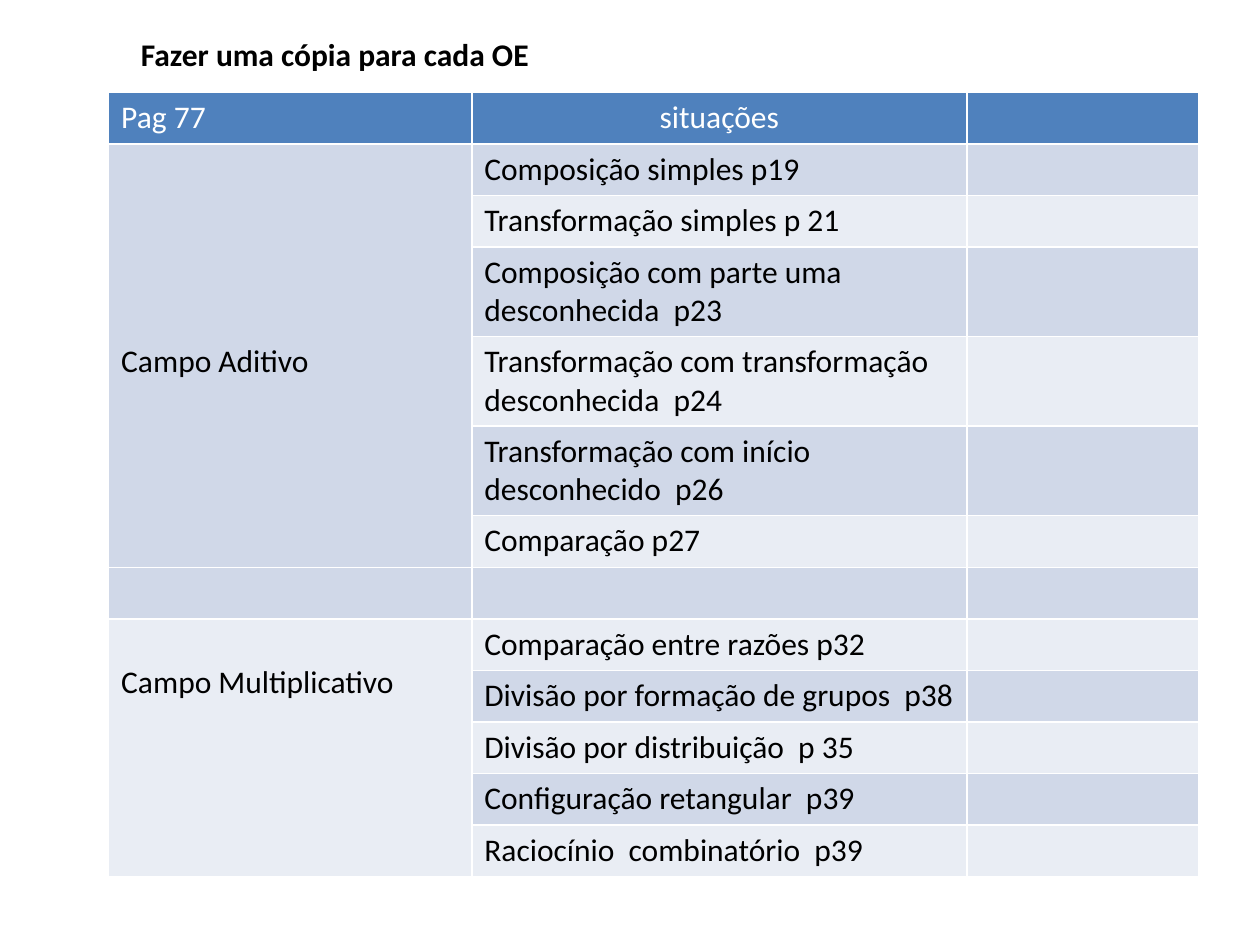
from pptx import Presentation
from pptx.dml.color import RGBColor
from pptx.enum.text import MSO_AUTO_SIZE, PP_ALIGN
from pptx.util import Cm, Pt

TITLE = "Fazer uma cópia para cada OE"
HEAD = ["Pag 77", "situações", ""]
# Field name, top margin of its cell in cm, situations
FIELDS = [
    ("Campo Aditivo", 4, [
        "Composição simples p19",
        "Transformação simples p 21",
        "Composição com parte uma desconhecida  p23",
        "Transformação com transformação desconhecida  p24",
        "Transformação com início desconhecido  p26",
        "Comparação p27",
    ]),
    ("", 0.13, [""]),
    ("Campo Multiplicativo", 0.9, [
        "Comparação entre razões p32",
        "Divisão por formação de grupos  p38",
        "Divisão por distribuição  p 35",
        "Configuração retangular  p39",
        "Raciocínio  combinatório  p39",
    ]),
]
COLS = [7.32, 9.98, 4.67]
LOW, TALL = 1.04, 1.8
WRAP = 40  # longer situations take two lines
COLORS = {"head": "4F81BD", "odd": "D0D8E8", "even": "E9EDF4",
          "white": "FFFFFF", "black": "000000"}


def color(name):
    return RGBColor.from_string(COLORS[name])


def write(frame, text, ink, bold=False):
    para = frame.paragraphs[0]
    para.text = text
    para.font.name = "Calibri"
    para.font.size = Pt(18)
    para.font.bold = bold
    para.font.color.rgb = color(ink)
    return para


def paint(cell, text, fill, ink="black"):
    cell.fill.solid()
    cell.fill.fore_color.rgb = color(fill)
    return write(cell.text_frame, text, ink)


deck = Presentation()
deck.slide_width, deck.slide_height = Cm(25.4), Cm(19.05)
slide = deck.slides.add_slide(deck.slide_layouts[6])

# Table grid
lines = [item for _, _, items in FIELDS for item in items]
sizes = [LOW] + [TALL if len(line) > WRAP else LOW for line in lines]
table = slide.shapes.add_table(
    len(sizes), len(COLS), Cm(2.19), Cm(1.86),
    Cm(sum(COLS)), Cm(sum(sizes))).table
for col, width in zip(table.columns, COLS):
    col.width = Cm(width)
for row, height in zip(table.rows, sizes):
    row.height = Cm(height)

# Header row
for col, text in enumerate(HEAD):
    para = paint(table.cell(0, col), text, "head", "white")
    if col == 1:
        para.alignment = PP_ALIGN.CENTER

# Banded rows
for row, line in enumerate(lines, 1):
    for col, text in enumerate(["", line, ""]):
        paint(table.cell(row, col), text, "odd" if row % 2 else "even")

# Field names, each spanning its situations
top = 1
for name, margin, items in FIELDS:
    cell = table.cell(top, 0)
    last = top + len(items) - 1
    if last > top:
        cell.merge(table.cell(last, 0))
    write(cell.text_frame, name, "black")
    cell.margin_top = Cm(margin)
    top = last + 1

# Title
box = slide.shapes.add_textbox(Cm(2.59), Cm(0.58), Cm(12.12), Cm(1.03))
box.text_frame.word_wrap = True
box.text_frame.auto_size = MSO_AUTO_SIZE.SHAPE_TO_FIT_TEXT
write(box.text_frame, TITLE, "black", bold=True)

deck.save("out.pptx")
